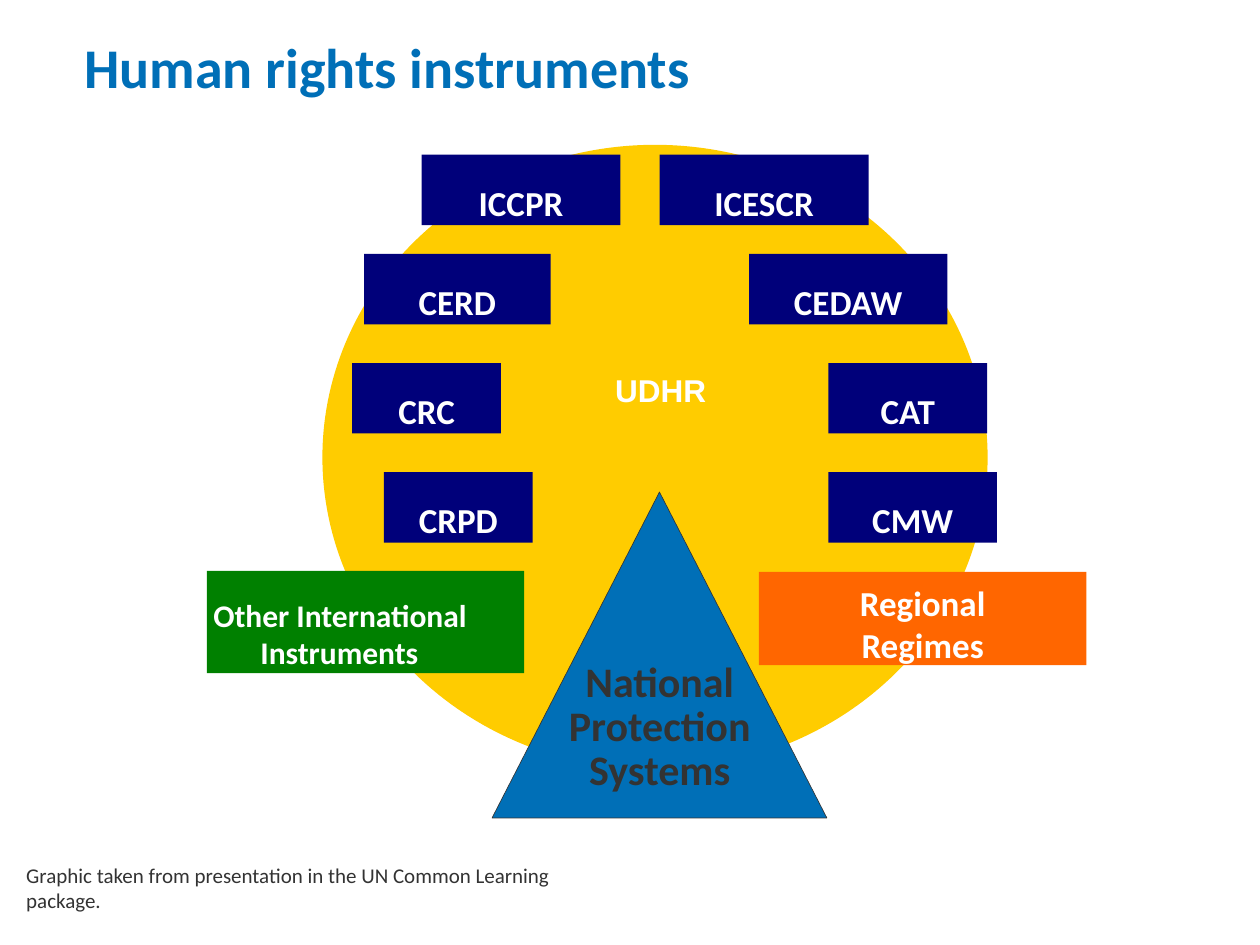
from pptx import Presentation
from pptx.dml.color import RGBColor
from pptx.enum.shapes import MSO_SHAPE
from pptx.enum.text import MSO_ANCHOR, PP_ALIGN
from pptx.util import Cm, Pt

RECTANGLE, OVAL, TRIANGLE = MSO_SHAPE.RECTANGLE, MSO_SHAPE.OVAL, MSO_SHAPE.ISOSCELES_TRIANGLE
TOP, BOTTOM = MSO_ANCHOR.TOP, MSO_ANCHOR.BOTTOM
LEFT, CENTER = PP_ALIGN.LEFT, PP_ALIGN.CENTER

COLORS = {
    "white": "FFFFFF", "yellow": "FFCC00", "navy": "00007A", "blue": "006FB7",
    "green": "008000", "orange": "FF6600", "dark": "333333",
}

prs = Presentation()
prs.slide_width, prs.slide_height = Cm(25.4), Cm(19.05)
slide = prs.slides.add_slide(prs.slide_layouts[6])


def add_figure(kind, box, fill):
    figure = slide.shapes.add_shape(kind, *map(Cm, box))
    figure.shadow.inherit = False
    figure.fill.solid()
    figure.fill.fore_color.rgb = RGBColor.from_string(COLORS[fill])
    figure.line.fill.background()
    return figure


def write(holder, lines, size, color, align=LEFT, anchor=TOP, bold=True, font="Calibri", bottom=0.13):
    frame = holder.text_frame
    frame.word_wrap = True
    frame.vertical_anchor = anchor
    frame.margin_left = frame.margin_right = frame.margin_top = Cm(0.13)
    frame.margin_bottom = Cm(bottom)
    for i, line in enumerate(lines):
        paragraph = frame.paragraphs[0] if i == 0 else frame.add_paragraph()
        paragraph.text = line
        paragraph.alignment = align
        paragraph.font.name = font
        paragraph.font.size = Pt(size)
        paragraph.font.bold = bold
        paragraph.font.color.rgb = RGBColor.from_string(COLORS[color])
    return frame


add_figure(OVAL, (6.5, 2.92, 13.41, 12.6), "yellow")

udhr = slide.shapes.add_textbox(Cm(10.72), Cm(7.35), Cm(5.2), Cm(0.97))
write(udhr, ["UDHR"], 18, "white", CENTER, font="Arial")

treaty_rows = [
    (3.12, [("ICCPR", 8.5, 4.01), ("ICESCR", 13.3, 4.21)]),
    (5.12, [("CERD", 7.34, 3.76), ("CEDAW", 15.1, 4)]),
    (7.32, [("CRC", 7.1, 3), ("CAT", 16.7, 3.2)]),
    (9.52, [("CRPD", 7.74, 3), ("CMW", 16.7, 3.4)]),
]
for top, treaties in treaty_rows:
    for treaty, left, width in treaties:
        block = add_figure(RECTANGLE, (left, top, width, 1.42), "navy")
        write(block, [treaty], 20, "white", CENTER, BOTTOM, bottom=0.04)

national = add_figure(TRIANGLE, (9.92, 9.92, 6.75, 6.57), "blue")
national.line.color.rgb = RGBColor.from_string(COLORS["dark"])
national.line.width = Pt(0.37)

systems = slide.shapes.add_textbox(Cm(10.8), Cm(13), Cm(5), Cm(2.98))
systems_frame = write(systems, ["National", "Protection", "Systems"], 24, "dark", CENTER, BOTTOM, bottom=0)
for i, paragraph in enumerate(systems_frame.paragraphs):
    paragraph.line_spacing = 0.7
    paragraph.space_before = Pt(5 if i else 0)

international = add_figure(RECTANGLE, (4.17, 11.51, 6.4, 2.06), "green")
international_frame = write(
    international, ["Other International Instruments"], 18, "white", LEFT, BOTTOM, bottom=0.04
)
hanging = international_frame.paragraphs[0]._p.get_or_add_pPr()
hanging.set("marL", str(Cm(0.95)))
hanging.set("indent", str(-Cm(0.95)))

regional = add_figure(RECTANGLE, (15.3, 11.53, 6.6, 1.88), "orange")
write(regional, ["Regional", "Regimes"], 20, "white", CENTER, BOTTOM, bottom=0)

title = slide.shapes.add_textbox(Cm(1.57), Cm(0.52), Cm(22.86), Cm(1.55))
write(title, ["Human rights instruments"], 32, "blue")

credit = slide.shapes.add_textbox(Cm(0.4), Cm(17.25), Cm(11.86), Cm(1.24))
write(
    credit, ["Graphic taken from presentation in the UN Common Learning package."],
    12, "dark", bold=False,
)

prs.save("out.pptx")
